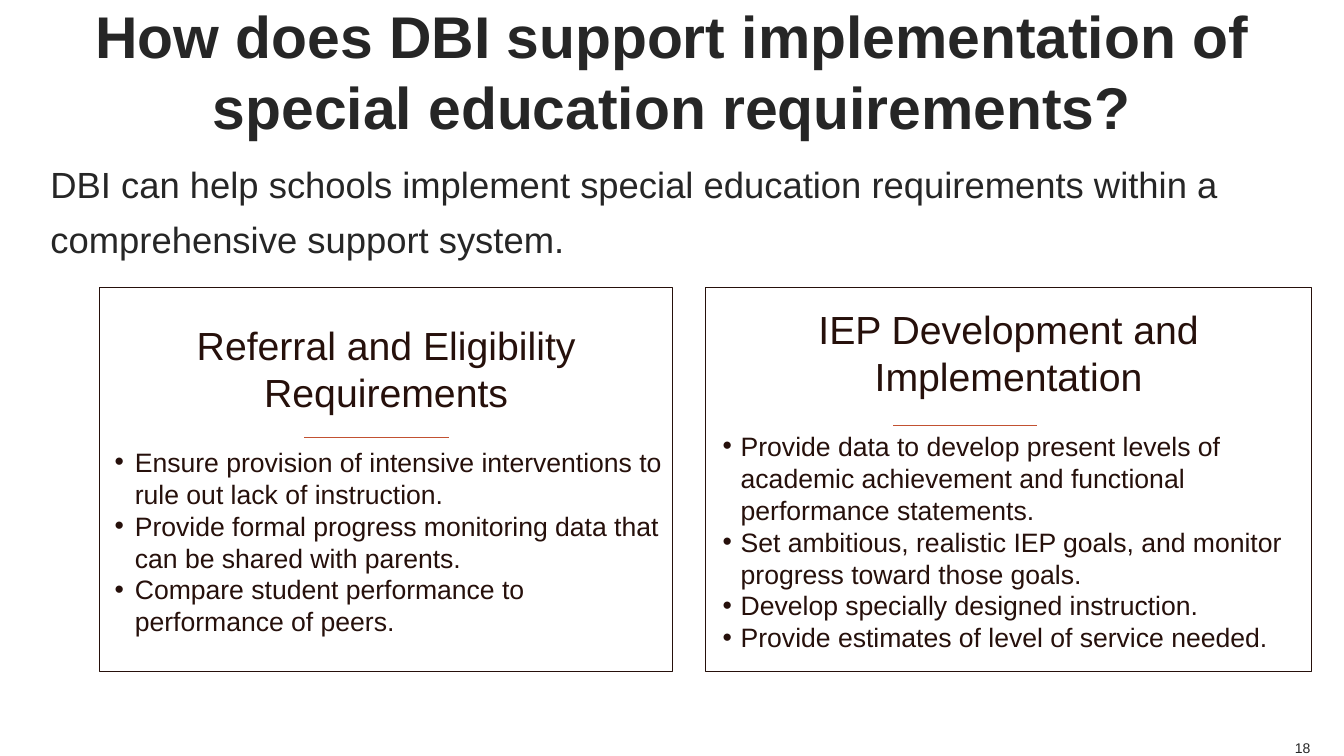
from pptx import Presentation
from pptx.dml.color import RGBColor
from pptx.enum.shapes import MSO_CONNECTOR, MSO_SHAPE
from pptx.enum.text import MSO_ANCHOR, PP_ALIGN
from pptx.oxml.ns import qn
from pptx.util import Inches, Pt
from lxml import etree

LEFT, CENTER, RIGHT = PP_ALIGN.LEFT, PP_ALIGN.CENTER, PP_ALIGN.RIGHT
TOP, MIDDLE, BOTTOM = MSO_ANCHOR.TOP, MSO_ANCHOR.MIDDLE, MSO_ANCHOR.BOTTOM
RECTANGLE, STRAIGHT = MSO_SHAPE.RECTANGLE, MSO_CONNECTOR.STRAIGHT

COLORS = {"ink": "262626", "card": "26100B", "rule": "C25131", "paper": "FFFFFF"}
COLUMNS, ROWS = 80, 45
RULE_WIDTH = 8.58


class RequirementsSlide:
    """Slide drawn on an 80 by 45 grid in one font."""

    font_name = "Arial"

    def __init__(self, deck):
        self.column = deck.slide_width / COLUMNS
        self.row = deck.slide_height / ROWS
        self.slide = deck.slides.add_slide(deck.slide_layouts[5])

    def color(self, key):
        return RGBColor.from_string(COLORS[key])

    def box(self, left, top, width, height):
        return (round(left * self.column), round(top * self.row),
                round(width * self.column), round(height * self.row))

    def style(self, paragraph, size, color="ink", align=LEFT, bold=False):
        paragraph.alignment = align
        for run in paragraph.runs:
            run.font.name = self.font_name
            run.font.size = Pt(size)
            run.font.bold = bold
            run.font.color.rgb = self.color(color)

    def frame(self, holder, anchor, wrap=True):
        frame = holder.text_frame
        frame.word_wrap = wrap
        frame.vertical_anchor = anchor
        frame.margin_left = frame.margin_right = 0
        frame.margin_top = frame.margin_bottom = 0
        return frame

    def title(self, words, *place):
        heading = self.slide.shapes.title
        heading.left, heading.top, heading.width, heading.height = self.box(*place)
        frame = self.frame(heading, MIDDLE)
        frame.text = words
        self.style(frame.paragraphs[0], 42, align=CENTER, bold=True)

    def text(self, words, size, *place, align=LEFT, anchor=TOP, wrap=True, spacing=1.0):
        holder = self.slide.shapes.add_textbox(*self.box(*place))
        frame = self.frame(holder, anchor, wrap)
        frame.text = words
        frame.paragraphs[0].line_spacing = spacing
        self.style(frame.paragraphs[0], size, align=align)

    def bullet(self, paragraph, indent):
        properties = paragraph._p.get_or_add_pPr()
        properties.set("marL", str(Inches(0.25)))
        properties.set("indent", str(-Inches(indent)))
        etree.SubElement(properties, qn("a:buFont")).set("typeface", self.font_name)
        etree.SubElement(properties, qn("a:buChar")).set("char", "•")

    def card(self, heading, points, indent, *place):
        panel = self.slide.shapes.add_shape(RECTANGLE, *self.box(*place))
        panel.shadow.inherit = False
        panel.fill.solid()
        panel.fill.fore_color.rgb = self.color("paper")
        panel.line.color.rgb = self.color("card")
        panel.line.width = Pt(1)
        frame = panel.text_frame
        frame.word_wrap = True
        frame.vertical_anchor = MIDDLE
        frame.text = "\n".join([heading, *points])
        title, *items = frame.paragraphs
        self.style(title, 28, "card", CENTER)
        items[0].space_before = Pt(21.6)
        for item in items:
            self.bullet(item, indent)
            self.style(item, 19, "card")

    def rule(self, left, top):
        start_x, start_y, length, _ = self.box(left, top, RULE_WIDTH, 0)
        line = self.slide.shapes.add_connector(
            STRAIGHT, start_x, start_y, start_x + length, start_y)
        line.line.color.rgb = self.color("rule")
        line.line.width = Pt(0.5)
        etree.SubElement(line._element.spPr, qn("a:effectLst"))


def main():
    deck = Presentation()
    deck.slide_width, deck.slide_height = Inches(13.33), Inches(7.5)
    page = RequirementsSlide(deck)
    page.title("How does DBI support implementation of special education requirements?",
               3, 0, 74, 8.4)
    page.text("DBI can help schools implement special education requirements "
              "within a comprehensive support system.", 26, 3, 9, 74, 7.5, spacing=1.25)
    page.text("18", 10, 76.98, 43.98, 1.02, 1.02, align=RIGHT, anchor=BOTTOM, wrap=False)
    page.card("Referral and Eligibility Requirements", [
        "Ensure provision of intensive interventions to rule out lack of instruction.",
        "Provide formal progress monitoring data that can be shared with parents.",
        "Compare student performance to performance of peers.",
    ], 0.2, 5.94, 17.1, 34.08, 22.86)
    page.card("IEP Development and Implementation", [
        "Provide data to develop present levels of academic achievement "
        "and functional performance statements.",
        "Set ambitious, realistic IEP goals, and monitor progress toward those goals.",
        "Develop specially designed instruction.",
        "Provide estimates of level of service needed.",
    ], 0.18, 42, 17.1, 36.06, 22.86)
    page.rule(18.12, 26.04)
    page.rule(53.16, 25.32)
    deck.save("out.pptx")


if __name__ == "__main__":
    main()
